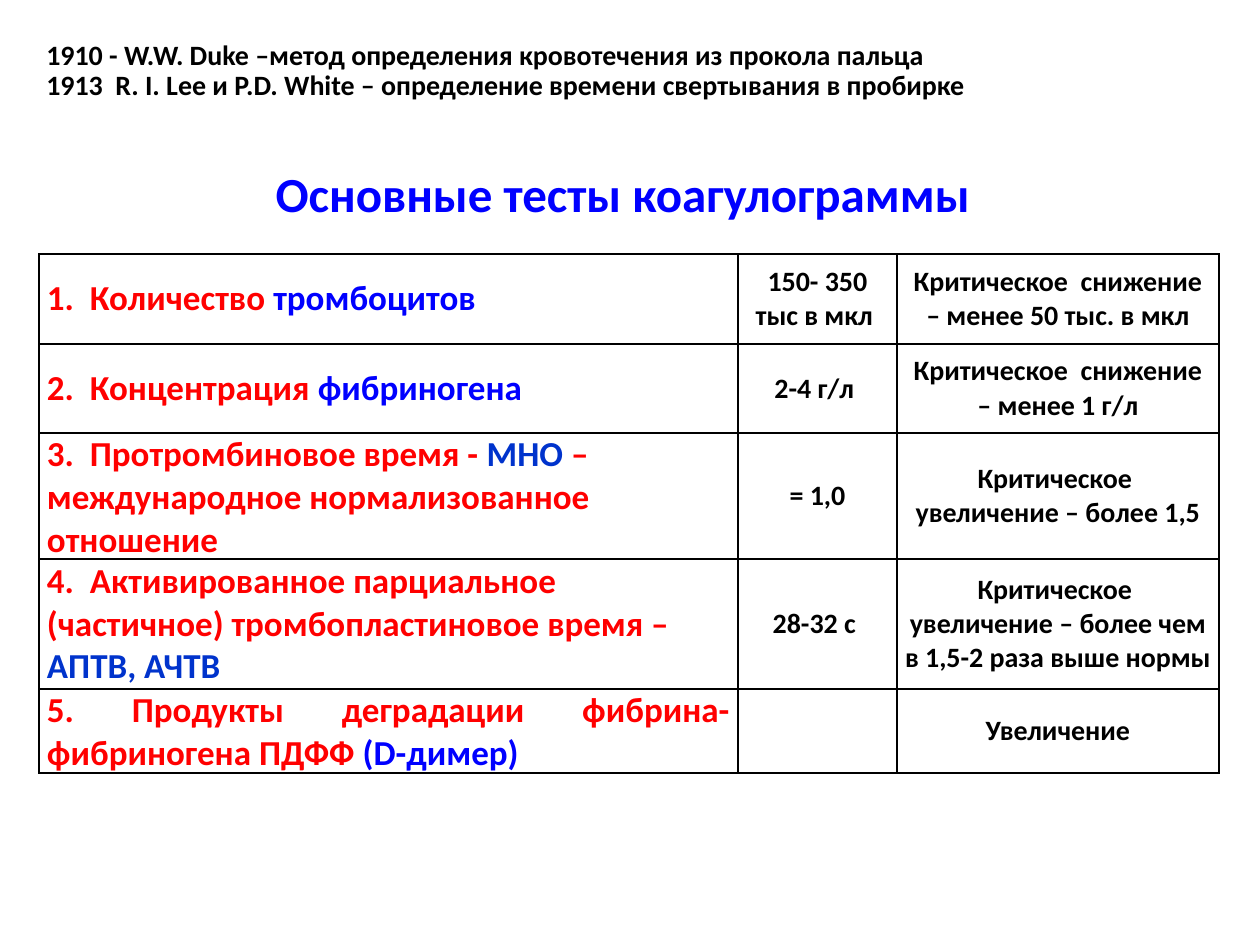
import dataclasses
import typing

import lxml.etree
import pptx
import pptx.dml.color
import pptx.enum.text
import pptx.oxml.ns
import pptx.util

SCALE = 914400 / 126
FONT = "Calibri"
BLACK = pptx.dml.color.RGBColor(0x00, 0x00, 0x00)
RED = pptx.dml.color.RGBColor(0xFF, 0x00, 0x00)
BLUE = pptx.dml.color.RGBColor(0x00, 0x00, 0xFF)
DEEP_BLUE = pptx.dml.color.RGBColor(0x00, 0x33, 0xCC)
ALIGN = pptx.enum.text.PP_ALIGN
MIDDLE = pptx.enum.text.MSO_ANCHOR.MIDDLE

COLUMN_WIDTHS = (699, 159, 322)
CELL_MARGIN = 8


class Part(typing.NamedTuple):
    text: str
    color: pptx.dml.color.RGBColor = RED


@dataclasses.dataclass(frozen=True)
class Test:
    height: int
    name: tuple[Part, ...]
    norm: str
    critical: str
    align: ALIGN = ALIGN.JUSTIFY


HISTORY = (
    "1910 - W.W. Duke –метод определения кровотечения из прокола пальца",
    "1913  R. I. Lee и P.D. White – определение времени свертывания в пробирке",
)
TESTS = (
    Test(90, (Part("1.  Количество "), Part("тромбоцитов ", BLUE)),
         "150- 350 тыс в мкл ", "Критическое  снижение – менее 50 тыс. в мкл"),
    Test(89, (Part("2.  Концентрация "), Part("фибриногена ", BLUE)),
         "2-4 г/л ", "Критическое  снижение – менее 1 г/л"),
    Test(115, (Part("3.  Протромбиновое время - "), Part("МНО", DEEP_BLUE),
               Part(" – международное нормализованное отношение")),
         " = 1,0 ", "Критическое  увеличение – более 1,5", ALIGN.LEFT),
    Test(130, (Part("4.  Активированное парциальное (частичное) тромбопластиновое время –"),
               Part("АПТВ, АЧТВ", DEEP_BLUE)),
         "28-32 с ", "Критическое  увеличение – более чем в 1,5-2 раза выше нормы", ALIGN.LEFT),
    Test(73, (Part("5. Продукты деградации фибрина-фибриногена ПДФФ "),
              Part("(D-димер) ", BLUE)),
         "", "Увеличение"),
)


def px(length: int) -> pptx.util.Emu:
    return pptx.util.Emu(round(length * SCALE))


def write(paragraph, parts: typing.Iterable[Part], size: int, align: ALIGN) -> None:
    paragraph.alignment = align
    paragraph.font.name = FONT
    paragraph.font.size = pptx.util.Pt(size)
    paragraph.font.bold = True
    for part in parts:
        run = paragraph.add_run()
        run.text = part.text
        run.font.color.rgb = part.color


def add_borders(cell) -> None:
    properties = cell._tc.get_or_add_tcPr()
    qn = pptx.oxml.ns.qn
    for position, side in enumerate(("lnL", "lnR", "lnT", "lnB")):
        line = lxml.etree.Element(qn(f"a:{side}"), w=str(pptx.util.Pt(1)))
        fill = lxml.etree.SubElement(line, qn("a:solidFill"))
        lxml.etree.SubElement(fill, qn("a:srgbClr"), val=str(BLACK))
        properties.insert(position, line)


def fill_cell(cell, parts: tuple[Part, ...], size: int, align: ALIGN, before: int) -> None:
    cell.margin_left = cell.margin_right = px(CELL_MARGIN)
    cell.margin_top = cell.margin_bottom = 0
    cell.vertical_anchor = MIDDLE
    cell.fill.background()
    add_borders(cell)
    paragraph = cell.text_frame.paragraphs[0]
    paragraph.space_before = pptx.util.Pt(before)
    paragraph.space_after = pptx.util.Pt(12)
    write(paragraph, parts, size, align)


def add_title(slide) -> None:
    title = slide.shapes.title
    title.left, title.top, title.width, title.height = map(px, (223, 165, 799, 55))
    title.text_frame.vertical_anchor = MIDDLE
    write(title.text_frame.paragraphs[0], [Part("Основные тесты коагулограммы", BLUE)],
          28, ALIGN.CENTER)


def add_history(slide) -> None:
    frame = slide.shapes.add_textbox(*map(px, (34, 35, 1121, 74))).text_frame
    frame.word_wrap = True
    frame.auto_size = pptx.enum.text.MSO_AUTO_SIZE.SHAPE_TO_FIT_TEXT
    for index, event in enumerate(HISTORY):
        paragraph = frame.add_paragraph() if index else frame.paragraphs[0]
        paragraph.line_spacing = 0.9
        write(paragraph, [Part(event, BLACK)], 16, ALIGN.LEFT)


def add_tests(slide) -> None:
    height = sum(test.height for test in TESTS)
    table = slide.shapes.add_table(
        len(TESTS), len(COLUMN_WIDTHS),
        *map(px, (39, 254, sum(COLUMN_WIDTHS), height))).table
    table.first_row = table.horz_banding = False
    for column, width in zip(table.columns, COLUMN_WIDTHS):
        column.width = px(width)
    for row, test in zip(table.rows, TESTS):
        row.height = px(test.height)
        name, norm, critical = row.cells
        fill_cell(name, test.name, 20, test.align, 24)
        for cell, text in ((norm, test.norm), (critical, test.critical)):
            parts = (Part(text, BLACK),) if text else ()
            fill_cell(cell, parts, 16, ALIGN.CENTER, 12)


def main() -> None:
    """Build the slide on the main coagulogram tests."""
    presentation = pptx.Presentation()
    presentation.slide_width, presentation.slide_height = px(1260), px(945)
    slide = presentation.slides.add_slide(presentation.slide_layouts[5])
    add_title(slide)
    add_history(slide)
    add_tests(slide)
    presentation.save("out.pptx")


if __name__ == "__main__":
    main()
